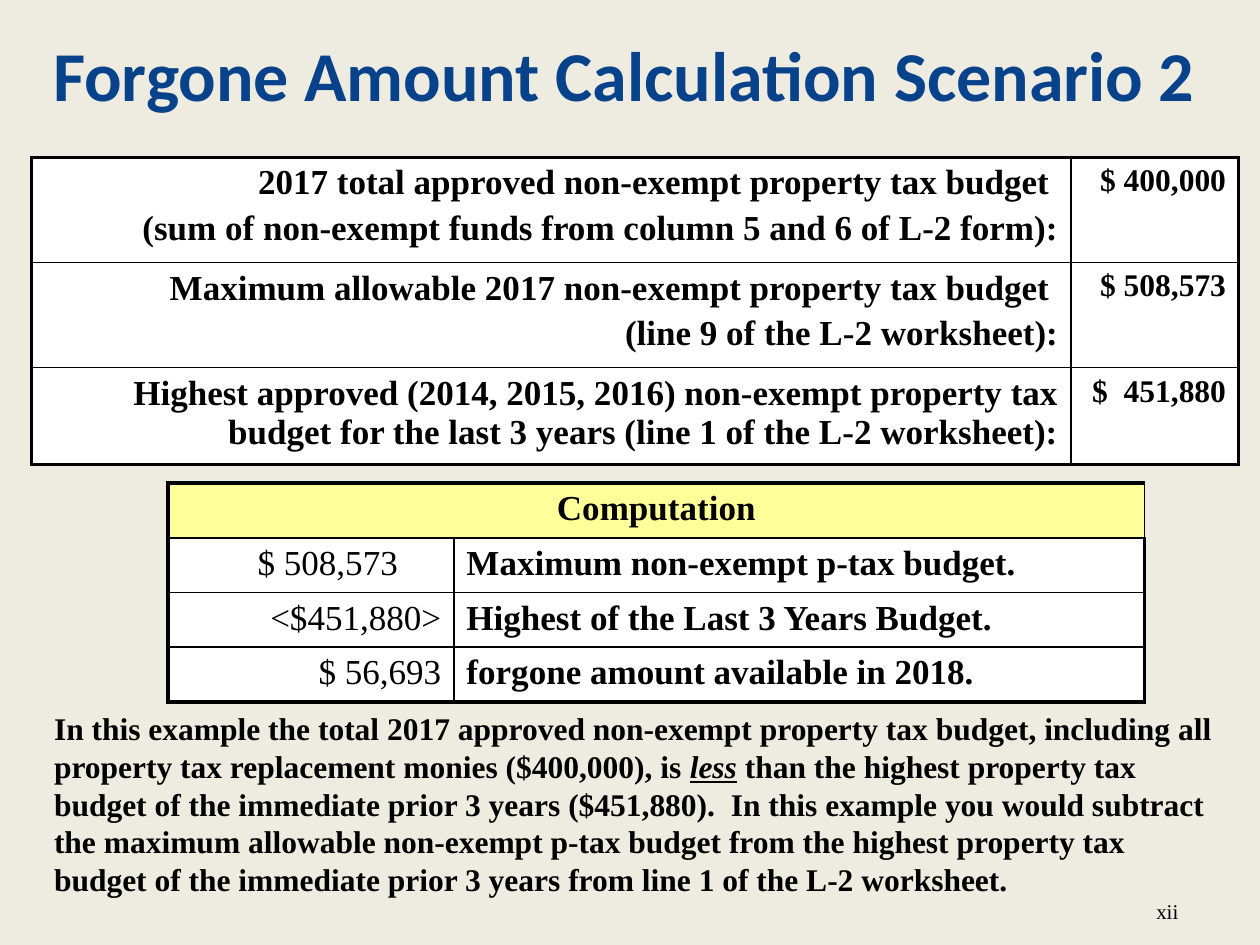
from lxml.etree import SubElement
from pptx import Presentation
from pptx.dml.color import RGBColor
from pptx.enum.text import MSO_ANCHOR as Anchor, PP_ALIGN as Align
from pptx.oxml.ns import qn
from pptx.util import Cm, Pt

COLORS = {"background": "EEECE1", "title": "07428A", "text": "000000",
          "cell": "FFFFFF", "heading": "FFFF99", "border": "000000"}
SERIF = "Times New Roman"
OUTER, INNER = Pt(2.25), Pt(1)


def add_run(paragraph, text, size, bold=True, font=SERIF, color="text"):
    run = paragraph.add_run()
    run.text = text
    run.font.name = font
    run.font.size = Pt(size)
    run.font.bold = bold
    run.font.color.rgb = RGBColor.from_string(COLORS[color])
    return run


def add_bordered_table(left, top, widths, heights):
    rows, columns = len(heights), len(widths)
    frame = slide.shapes.add_table(rows, columns, Cm(left), Cm(top),
                                   Cm(sum(widths)), Cm(sum(heights)))
    table = frame.table
    table.first_row = table.horz_banding = False
    for column, width in zip(table.columns, widths):
        column.width = Cm(width)
    for row, height in zip(table.rows, heights):
        row.height = Cm(height)
    for r in range(rows):
        for c in range(columns):
            cell = table.cell(r, c)
            properties = cell._tc.get_or_add_tcPr()
            edges = {"a:lnL": c == 0, "a:lnR": c == columns - 1,
                     "a:lnT": r == 0, "a:lnB": r == rows - 1}
            for tag, is_outer in edges.items():
                line = SubElement(properties, qn(tag), w=str(OUTER if is_outer else INNER))
                fill = SubElement(line, qn("a:solidFill"))
                SubElement(fill, qn("a:srgbClr"), val=COLORS["border"])
            cell.fill.solid()
            cell.fill.fore_color.rgb = RGBColor.from_string(COLORS["cell"])
    return table


presentation = Presentation()
presentation.slide_width = Cm(25.4)
presentation.slide_height = Cm(19.05)
slide = presentation.slides.add_slide(presentation.slide_layouts[6])
slide.background.fill.solid()
slide.background.fill.fore_color.rgb = RGBColor.from_string(COLORS["background"])

# Title
title = slide.shapes.add_textbox(Cm(0.64), Cm(0.43), Cm(23.88), Cm(2.11))
title.text_frame.word_wrap = True
title.text_frame.vertical_anchor = Anchor.MIDDLE
paragraph = title.text_frame.paragraphs[0]
paragraph.alignment = Align.CENTER
add_run(paragraph, "Forgone Amount Calculation Scenario 2", 40, font="Calibri", color="title")

# Budget table
budgets = [
    (["2017 total approved non-exempt property tax budget ",
      "(sum of non-exempt funds from column 5 and 6 of L-2 form):"], "$ 400,000"),
    (["Maximum allowable 2017 non-exempt property tax budget ",
      "(line 9 of the L-2 worksheet):"], "$ 508,573"),
    (["Highest approved (2014, 2015, 2016) non-exempt property tax "
      "budget for the last 3 years (line 1 of the L-2 worksheet):"], "$  451,880"),
]
table = add_bordered_table(0.64, 3.17, [20.95, 3.38], [2.12, 2.12, 1.95])
for r, (lines, amount) in enumerate(budgets):
    for c, (texts, size) in enumerate([(lines, 20), ([amount], 18)]):
        frame = table.cell(r, c).text_frame
        for i, text in enumerate(texts):
            paragraph = frame.add_paragraph() if i else frame.paragraphs[0]
            paragraph.alignment = Align.RIGHT
            paragraph.space_before = Pt(size * 0.2)
            add_run(paragraph, text, size)

# Computation table
computation = [
    ("$ 508,573", "Maximum non-exempt p-tax budget."),
    ("<$451,880>", "Highest of the Last 3 Years Budget."),
    ("$ 56,693", "forgone amount available in 2018."),
]
table = add_bordered_table(3.39, 9.74, [5.76, 13.92], [1.1] * 4)
heading = table.cell(0, 0)
heading.merge(table.cell(0, 1))
heading.fill.fore_color.rgb = RGBColor.from_string(COLORS["heading"])
paragraph = heading.text_frame.paragraphs[0]
paragraph.alignment = Align.CENTER
paragraph.space_before = Pt(4)
add_run(paragraph, "Computation", 20)
for r, texts in enumerate(computation, start=1):
    for c, text in enumerate(texts):
        paragraph = table.cell(r, c).text_frame.paragraphs[0]
        paragraph.alignment = Align.LEFT if c else Align.RIGHT
        paragraph.space_before = Pt(4)
        add_run(paragraph, text, 20, bold=c == 1)
table.cell(1, 0).margin_right = Cm(1.13)

# Explanation
explanation = slide.shapes.add_textbox(Cm(0.84), Cm(14.17), Cm(23.93), Cm(4.06))
explanation.text_frame.word_wrap = True
paragraph = explanation.text_frame.paragraphs[0]
paragraph.space_before = Pt(9)
add_run(paragraph, "In this example the total 2017 approved non-exempt property tax budget, "
        "including all property tax replacement monies ($400,000), is ", 18)
emphasis = add_run(paragraph, "less", 18)
emphasis.font.italic = emphasis.font.underline = True
add_run(paragraph, " than the highest property tax budget of the immediate prior 3 years "
        "($451,880).  In this example you would subtract the maximum allowable non-exempt "
        "p-tax budget from the highest property tax budget of the immediate prior 3 years "
        "from line 1 of the L-2 worksheet.", 18)

# Page number
page_number = slide.shapes.add_textbox(Cm(23.06), Cm(17.98), Cm(1.69), Cm(0.76))
page_number.text_frame.word_wrap = True
paragraph = page_number.text_frame.paragraphs[0]
paragraph.space_before = Pt(6)
add_run(paragraph, "xii", 12, bold=False)

presentation.save("out.pptx")
